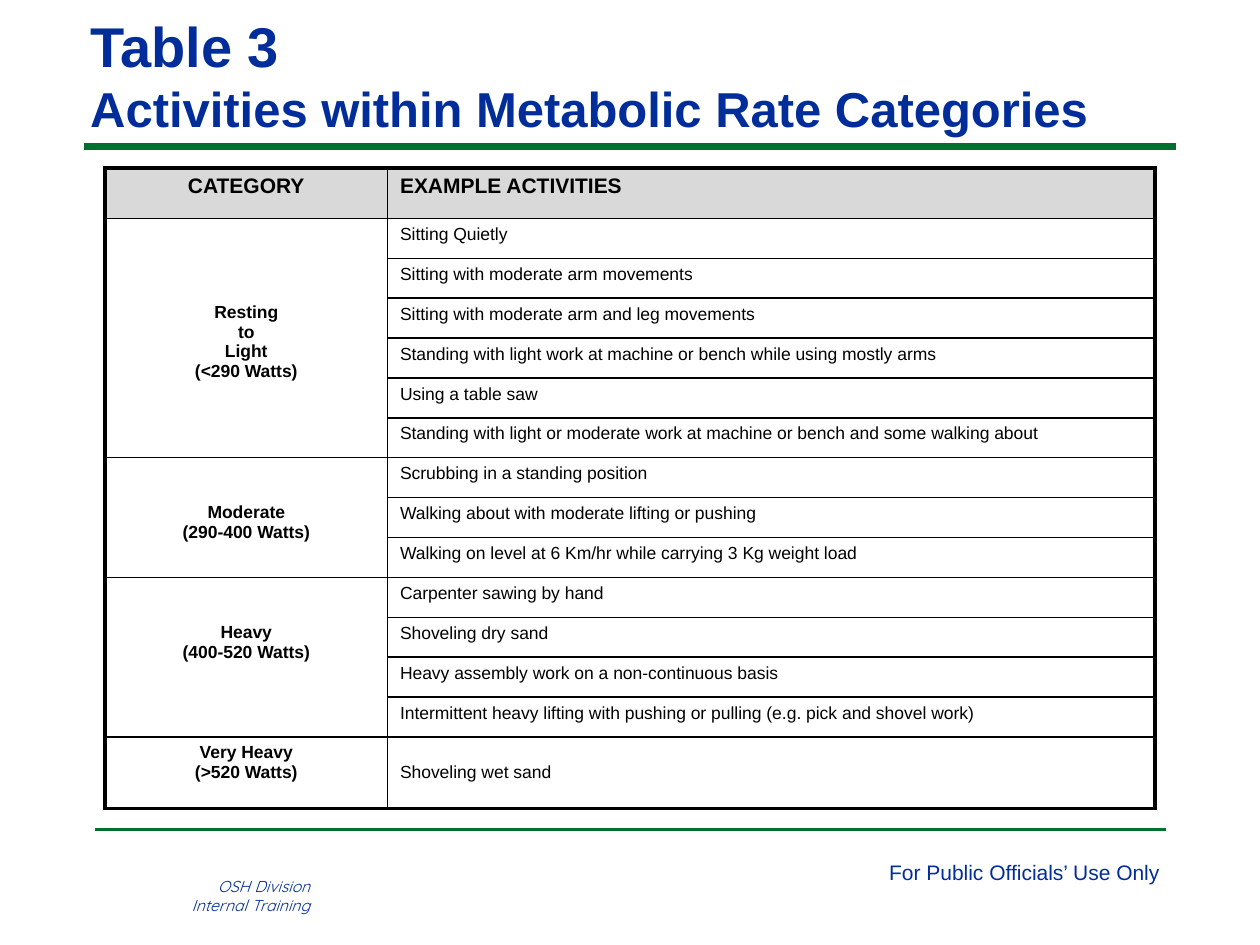
from lxml import etree
from pptx import Presentation
from pptx.dml.color import RGBColor
from pptx.enum.shapes import MSO_CONNECTOR
from pptx.enum.text import MSO_ANCHOR, PP_ALIGN
from pptx.oxml import parse_xml
from pptx.oxml.ns import nsdecls, qn
from pptx.util import Inches, Pt

STRAIGHT = MSO_CONNECTOR.STRAIGHT
LEFT, CENTER, RIGHT = PP_ALIGN.LEFT, PP_ALIGN.CENTER, PP_ALIGN.RIGHT
BOTTOM, TOP = MSO_ANCHOR.BOTTOM, MSO_ANCHOR.TOP
BLUE, GREEN, BLACK, GRAY = "012D9A", "007030", "000000", "D9D9D9"

prs = Presentation()
prs.slide_width, prs.slide_height = Inches(10), Inches(7.5)
UNIT = prs.slide_width / 120  # the slide is a grid of 120 columns by 90 rows
slide = prs.slides.add_slide(prs.slide_layouts[6])


def rgb(color):
    return RGBColor.from_string(color)


def write(frame, lines, size, color, font="Arial", align=LEFT, bold=False, italic=False):
    for i, line in enumerate(lines):
        paragraph = frame.paragraphs[0] if i == 0 else frame.add_paragraph()
        paragraph.text = line
        paragraph.alignment = align
        paragraph.font.size = Pt(size)
        paragraph.font.name = font
        paragraph.font.bold = bold
        paragraph.font.italic = italic
        paragraph.font.color.rgb = rgb(color)


# Rules under the title and above the footer
for start, end, row, weight in [(8, 112, 14, 4), (9, 111, 79, 2)]:
    rule = slide.shapes.add_connector(
        STRAIGHT, *[round(n * UNIT) for n in (start, row, end, row)])
    rule.line.color.rgb = rgb(GREEN)
    rule.line.width = Pt(weight)
    etree.SubElement(rule._element.spPr, qn("a:effectLst"))

# Footer
for area, lines, style in [
    ((83.5, 81.25, 28.4, 3.6), ["For Public Officials’ Use Only"], {"size": 12}),
    ((14, 82.9, 16.7, 5.9), ["OSH Division", "Internal Training"],
     {"size": 9, "font": "Quicksand", "align": RIGHT, "italic": True}),
]:
    footer = slide.shapes.add_textbox(*[round(n * UNIT) for n in area]).text_frame
    footer.word_wrap = False
    write(footer, lines, color=BLUE, **style)

# Title
title = slide.shapes.add_textbox(*[round(n * UNIT) for n in (8, 1, 108, 12.1)]).text_frame
title.word_wrap = True
title.vertical_anchor = BOTTOM
title.margin_left = title.margin_right = Inches(0.05)
title.margin_top = title.margin_bottom = 0
write(title, ["Table 3", "Activities within Metabolic Rate Categories"], 28, BLUE, bold=True)
title.paragraphs[0].font.size = Pt(32)

# Category lines, text lines skipped above them, activities
categories = [
    (["Resting", "to", "Light", "(<290 Watts)"], 4, [
        "Sitting Quietly",
        "Sitting with moderate arm movements",
        "Sitting with moderate arm and leg movements",
        "Standing with light work at machine or bench while using mostly arms",
        "Using a table saw",
        "Standing with light or moderate work at machine or bench and some walking about",
    ]),
    (["Moderate", "(290-400 Watts)"], 2, [
        "Scrubbing in a standing position",
        "Walking about with moderate lifting or pushing",
        "Walking on level at 6 Km/hr while carrying 3 Kg weight load",
    ]),
    (["Heavy", "(400-520 Watts)"], 2, [
        "Carpenter sawing by hand",
        "Shoveling dry sand",
        "Heavy assembly work on a non-continuous basis",
        "Intermittent heavy lifting with pushing or pulling (e.g. pick and shovel work)",
    ]),
    (["Very Heavy", "(>520 Watts)"], 0, ["Shoveling wet sand"]),
]
MARGIN, TEXT_LINE = 0.05, 0.155
HEADER_ROW, LAST_ROW, TABLE_ROWS = 4.8, 6.8, 61
last = sum(len(activities) for _, _, activities in categories)
table = slide.shapes.add_table(
    last + 1, 2, *[round(n * UNIT) for n in (10, 16, 100, TABLE_ROWS)]).table
table.first_row = table.horz_banding = False
for column, width in zip(table.columns, (26.9, 73.1)):
    column.width = round(width * UNIT)
activity_row = (TABLE_ROWS - HEADER_ROW - LAST_ROW) / (last - 1)
heights = [HEADER_ROW] + [activity_row] * (last - 1) + [LAST_ROW]
for row, height in zip(table.rows, heights):
    row.height = round(height * UNIT)

# Thick outer frame, thin inner lines
for r in range(last + 1):
    for c in range(2):
        cell = table.cell(r, c)
        properties = cell._tc.get_or_add_tcPr()
        for side, outer in [("L", c == 0), ("R", c == 1), ("T", r == 0), ("B", r == last)]:
            weight = Pt(2.25 if outer else 1)
            properties.append(parse_xml(
                f'<a:ln{side} {nsdecls("a")} w="{weight}"><a:solidFill>'
                f'<a:srgbClr val="{BLACK}"/></a:solidFill></a:ln{side}>'))
        if r == 0:
            cell.fill.solid()
            cell.fill.fore_color.rgb = rgb(GRAY)
        else:
            cell.fill.background()
        cell.vertical_anchor = TOP

write(table.cell(0, 0).text_frame, ["CATEGORY"], 12, BLACK, align=CENTER, bold=True)
write(table.cell(0, 1).text_frame, ["EXAMPLE ACTIVITIES"], 12, BLACK, bold=True)

first = 1
for category, skipped, activities in categories:
    category_cell = table.cell(first, 0)
    if len(activities) > 1:
        category_cell.merge(table.cell(first + len(activities) - 1, 0))
    category_cell.margin_top = Inches(MARGIN + skipped * TEXT_LINE)
    write(category_cell.text_frame, category, 10, BLACK, align=CENTER, bold=True)
    for r, activity in enumerate(activities, first):
        write(table.cell(r, 1).text_frame, [activity], 10, BLACK)
    first += len(activities)
table.cell(last, 1).margin_top = Inches(MARGIN + TEXT_LINE)

prs.save("out.pptx")
